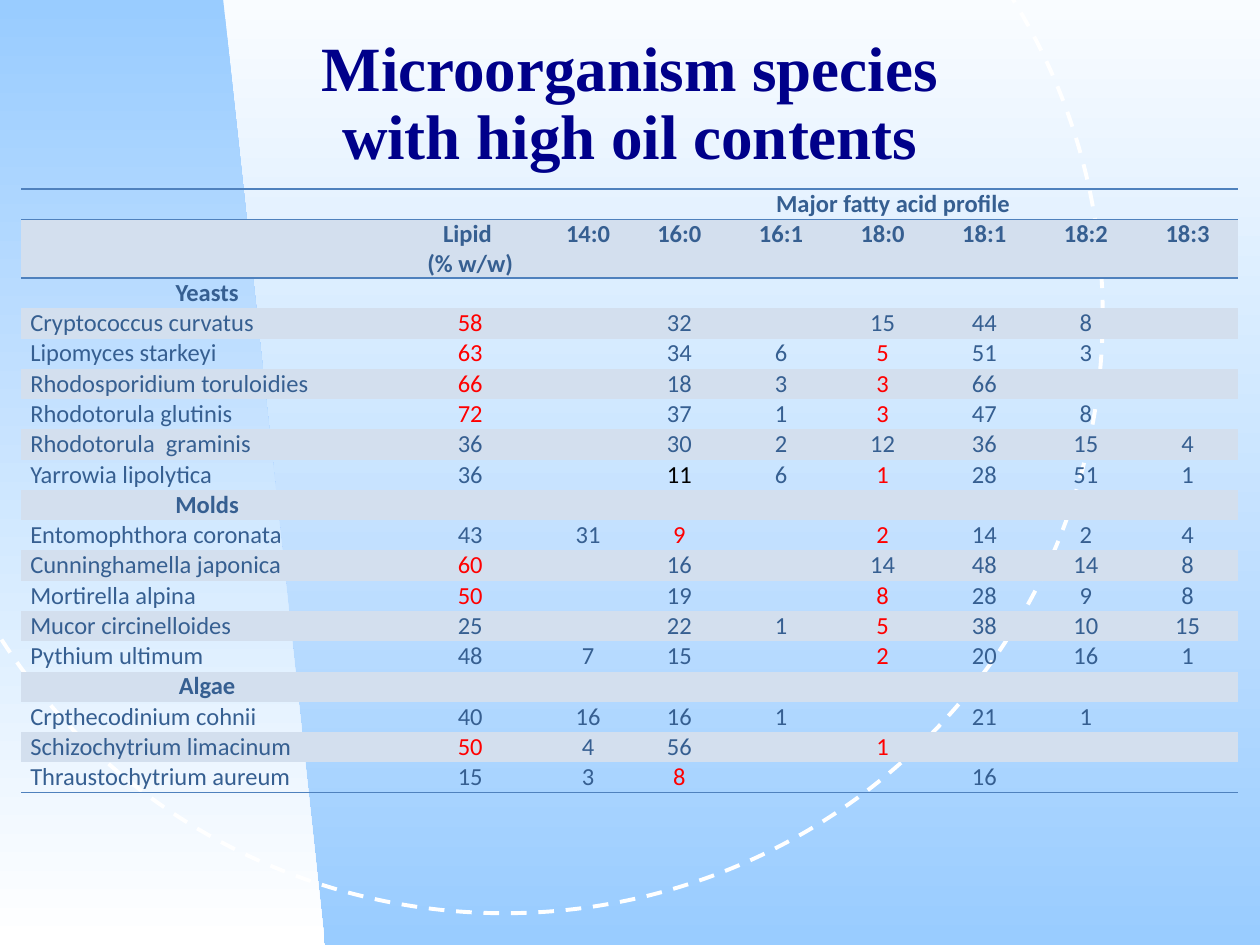
from lxml.etree import SubElement
from pptx import Presentation
from pptx.dml.color import RGBColor
from pptx.enum.dml import MSO_LINE
from pptx.enum.shapes import MSO_SHAPE
from pptx.enum.text import MSO_ANCHOR, PP_ALIGN
from pptx.oxml import parse_xml
from pptx.oxml.ns import nsdecls, qn
from pptx.util import Cm, Pt

SKY = RGBColor(0x99, 0xCC, 0xFF)
PALE = RGBColor(0xF9, 0xFC, 0xFF)
WHITE = RGBColor(0xFF, 0xFF, 0xFF)
NAVY = RGBColor(0x00, 0x00, 0x8A)
STEEL = RGBColor(0x36, 0x5F, 0x91)
RULE = RGBColor(0x4F, 0x81, 0xBD)
BAND = RGBColor(0xD3, 0xDF, 0xEE)
RED = RGBColor(0xFF, 0x00, 0x00)
BLACK = RGBColor(0x00, 0x00, 0x00)
NO_STYLE = "{2D5ABB26-0587-4C30-8999-92F81FD0307C}"

# Species rows: name, lipid, then the acids from 14:0 to 18:3; a lone name is a group
ROWS = [
    ["", "", "Major fatty acid profile"],
    ["", "Lipid \n(% w/w)", "14:0", "16:0", "16:1", "18:0", "18:1", "18:2", "18:3"],
    ["Yeasts"],
    ["Cryptococcus curvatus", 58, "", 32, "", 15, 44, 8],
    ["Lipomyces starkeyi", 63, "", 34, 6, 5, 51, 3],
    ["Rhodosporidium toruloidies", 66, "", 18, 3, 3, 66],
    ["Rhodotorula glutinis", 72, "", 37, 1, 3, 47, 8],
    ["Rhodotorula  graminis", 36, "", 30, 2, 12, 36, 15, 4],
    ["Yarrowia lipolytica", 36, "", 11, 6, 1, 28, 51, 1],
    ["Molds"],
    ["Entomophthora coronata", 43, 31, 9, "", 2, 14, 2, 4],
    ["Cunninghamella japonica", 60, "", 16, "", 14, 48, 14, 8],
    ["Mortirella alpina", 50, "", 19, "", 8, 28, 9, 8],
    ["Mucor circinelloides", 25, "", 22, 1, 5, 38, 10, 15],
    ["Pythium ultimum", 48, 7, 15, "", 2, 20, 16, 1],
    ["Algae"],
    ["Crpthecodinium cohnii", 40, 16, 16, 1, "", 21, 1],
    ["Schizochytrium limacinum", 50, 4, 56, "", 1],
    ["Thraustochytrium aureum", 15, 3, 8, "", "", 16],
]
LIPID, PALMITIC, STEARIC = 1, 3, 5


def set_gradient(fill, top, bottom):
    fill.gradient()
    fill.gradient_angle = 270
    for stop, color in zip(fill.gradient_stops, (top, bottom)):
        stop.color.rgb = color


def add_rule(cell, side):
    cell._tc.get_or_add_tcPr().insert(0, parse_xml(
        f'<a:{side} {nsdecls("a")} w="{Pt(1)}"><a:solidFill>'
        f'<a:srgbClr val="{RULE}"/></a:solidFill></a:{side}>'))


prs = Presentation()
prs.slide_width, prs.slide_height = Cm(25.4), Cm(19.05)
s = prs.slides.add_slide(prs.slide_layouts[6])

# Background: gradient, slanted panel and dashed ring
set_gradient(s.background.fill, PALE, SKY)

fb = s.shapes.build_freeform(Cm(4.5), 0)
fb.add_line_segments([(0, 0), (0, Cm(19.05)), (Cm(6.55), Cm(19.05))], close=True)
panel = fb.convert_to_shape()
panel.shadow.inherit = False
set_gradient(panel.fill, SKY, WHITE)
panel.line.fill.background()

ring = s.shapes.add_shape(MSO_SHAPE.OVAL, Cm(-1.9), Cm(-5.72), Cm(24.13), Cm(24.13))
ring.shadow.inherit = False
ring.fill.background()
ring.line.color.rgb = WHITE
ring.line.width = Pt(2.25)
ring.line.dash_style = MSO_LINE.DASH

# Title
tf = s.shapes.add_textbox(0, Cm(0.43), Cm(25.4), Cm(3.18)).text_frame
tf.word_wrap = True
tf.vertical_anchor = MSO_ANCHOR.BOTTOM
p = tf.paragraphs[0]
p.alignment = PP_ALIGN.CENTER
p.line_spacing = 0.9
for i, line in enumerate(["Microorganism species", "with high oil contents"]):
    if i:
        p.add_line_break()
    r = p.add_run()
    r.text = line
    r.font.name = "Times New Roman"
    r.font.size = Pt(36)
    r.font.bold = True
    r.font.color.rgb = NAVY

# Table frame
widths = [7.49, 3.12, 1.63] + [2.05] * 6
heights = [0.61, 1.17] + [0.61] * (len(ROWS) - 2)
gf = s.shapes.add_table(len(ROWS), len(widths), Cm(0.43), Cm(3.81),
                        Cm(sum(widths)), Cm(sum(heights)))
tbl = gf.table
tbl.first_row = tbl.horz_banding = False
tbl._tbl.tblPr.find(qn("a:tableStyleId")).text = NO_STYLE
for col, width in zip(tbl.columns, widths):
    col.width = Cm(width)
for row, height in zip(tbl.rows, heights):
    row.height = Cm(height)
tbl.cell(0, 2).merge(tbl.cell(0, 8))

# Table cells
for i, values in enumerate(ROWS):
    heading = i < 2 or len(values) == 1
    for j in range(len(widths)):
        value = values[j] if j < len(values) else ""
        cell = tbl.cell(i, j)
        cell.margin_left = cell.margin_right = Cm(0.18)
        cell.margin_top = cell.margin_bottom = 0
        if i % 2:
            cell.fill.solid()
            cell.fill.fore_color.rgb = BAND
        else:
            cell.fill.background()
        if i in (0, len(ROWS) - 1):
            add_rule(cell, "lnB")
        if i < 2:
            add_rule(cell, "lnT")

        # Red marks rich lipid and low saturated acids
        color = STEEL
        if not heading and value != "":
            if (j == LIPID and value >= 50) or (j in (PALMITIC, STEARIC) and value < 10):
                color = RED
            elif values[0] == "Yarrowia lipolytica" and j == PALMITIC:
                color = BLACK

        tf = cell.text_frame
        for k, line in enumerate(str(value).split("\n")):
            p = tf.add_paragraph() if k else tf.paragraphs[0]
            if heading or j:
                p.alignment = PP_ALIGN.CENTER
            if not line:
                SubElement(p._p, qn("a:endParaRPr"), sz="1400")
                continue
            r = p.add_run()
            r.text = line
            r.font.name = "Calibri"
            r.font.size = Pt(14)
            r.font.bold = heading
            r.font.color.rgb = color

prs.save("out.pptx")
